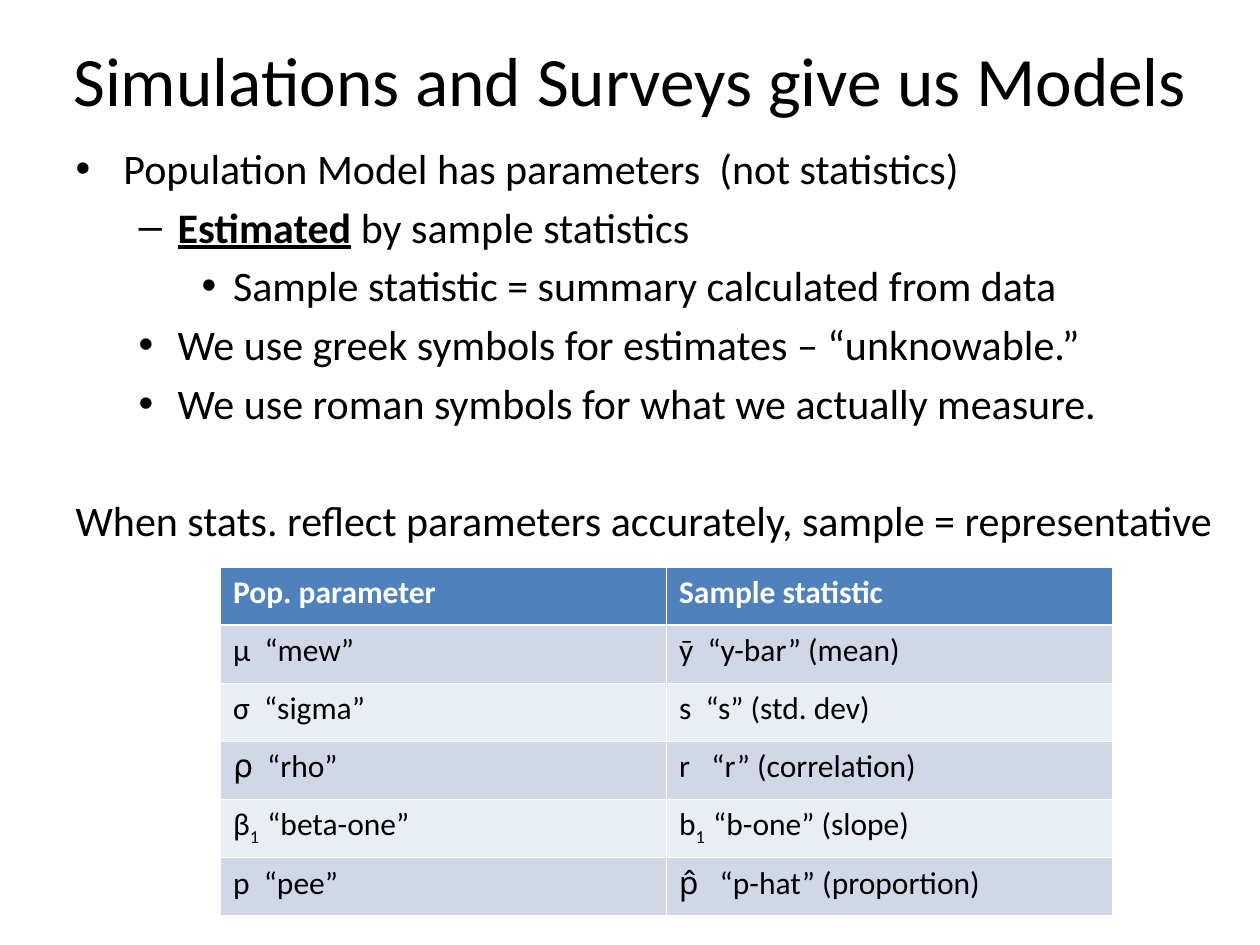
from lxml.etree import SubElement
from pptx import Presentation
from pptx.dml.color import RGBColor
from pptx.enum.text import MSO_ANCHOR, PP_ALIGN
from pptx.oxml.ns import qn
from pptx.util import Inches, Pt

COLORS = {
    "text": "000000",
    "header_text": "FFFFFF",
    "header": "4F81BD",
    "odd_row": "D0D8E8",
    "even_row": "E9EDF4",
}


def add_run(paragraph, text, color="text", subscript=False, **formats):
    run = paragraph.add_run()
    run.text = text
    for name, value in {"name": "Calibri", **formats}.items():
        setattr(run.font, name, value)
    run.font.color.rgb = RGBColor.from_string(COLORS[color])
    if subscript:
        run.font._element.set("baseline", "-25000")


prs = Presentation()
prs.slide_width, prs.slide_height = Inches(10), Inches(7.5)
slide = prs.slides.add_slide(prs.slide_layouts[1])

title, body = slide.placeholders
for holder, box in ((title, (0.25, 0, 9.5, 1.25)), (body, (0.5, 1.08, 9.25, 5.53))):
    holder.left, holder.top, holder.width, holder.height = map(Inches, box)

title.text_frame.vertical_anchor = MSO_ANCHOR.MIDDLE
heading = title.text_frame.paragraphs[0]
heading.alignment = PP_ALIGN.CENTER
add_run(heading, "Simulations and Surveys give us Models", size=Pt(39.6))

emphasis = {"bold": True, "underline": True}
points = [
    (0, "•", [("Population Model has parameters  (not statistics)", {})]),
    (1, "–", [("Estimated", emphasis), (" by sample statistics", {})]),
    (2, "•", [("Sample statistic = summary calculated from data", {})]),
    (1, "•", [("We use greek symbols for estimates – “unknowable.”", {})]),
    (1, "•", [("We use roman symbols for what we actually measure.", {})]),
    (0, None, [("When stats. reflect parameters accurately, sample = representative", {})]),
]
indents = [(0.38, -0.38), (0.81, -0.31), (1.25, -0.25)]
for index, (level, bullet, pieces) in enumerate(points):
    point = body.text_frame.paragraphs[0] if index == 0 else body.text_frame.add_paragraph()
    point.level = level
    if bullet is None:
        point.space_before = Pt(38)
    properties = point._p.get_or_add_pPr()
    for key, length in zip(("marL", "indent"), indents[level]):
        properties.set(key, str(Inches(length)))
    if bullet:
        SubElement(properties, qn("a:buChar")).set("char", bullet)
    else:
        SubElement(properties, qn("a:buNone"))
    for text, formats in pieces:
        add_run(point, text, size=Pt(24), **formats)

symbols = [
    (["Pop. parameter"], ["Sample statistic"]),
    (["μ  “mew”"], ["ȳ  “y-bar” (mean)"]),
    (["σ  “sigma”"], ["s  “s” (std. dev)"]),
    (["⍴  “rho”"], ["r   “r” (correlation)"]),
    (["β", "1  ", "“beta-one”"], ["b", "1  ", "“b-one” (slope)"]),
    (["p  “pee”"], ["p̂   “p-hat” (proportion)"]),
]
table = slide.shapes.add_table(
    len(symbols), 2, Inches(1.75), Inches(4.5), Inches(7.08), Inches(2.77)
).table
for row, pair in enumerate(symbols):
    is_header = row == 0
    fill = "header" if is_header else "odd_row" if row % 2 else "even_row"
    for column, pieces in enumerate(pair):
        cell = table.cell(row, column)
        cell.fill.solid()
        cell.fill.fore_color.rgb = RGBColor.from_string(COLORS[fill])
        for position, text in enumerate(pieces):
            add_run(
                cell.text_frame.paragraphs[0],
                text,
                color="header_text" if is_header else "text",
                subscript=position == 1,
                size=Pt(18),
                bold=is_header,
            )

prs.save("out.pptx")
